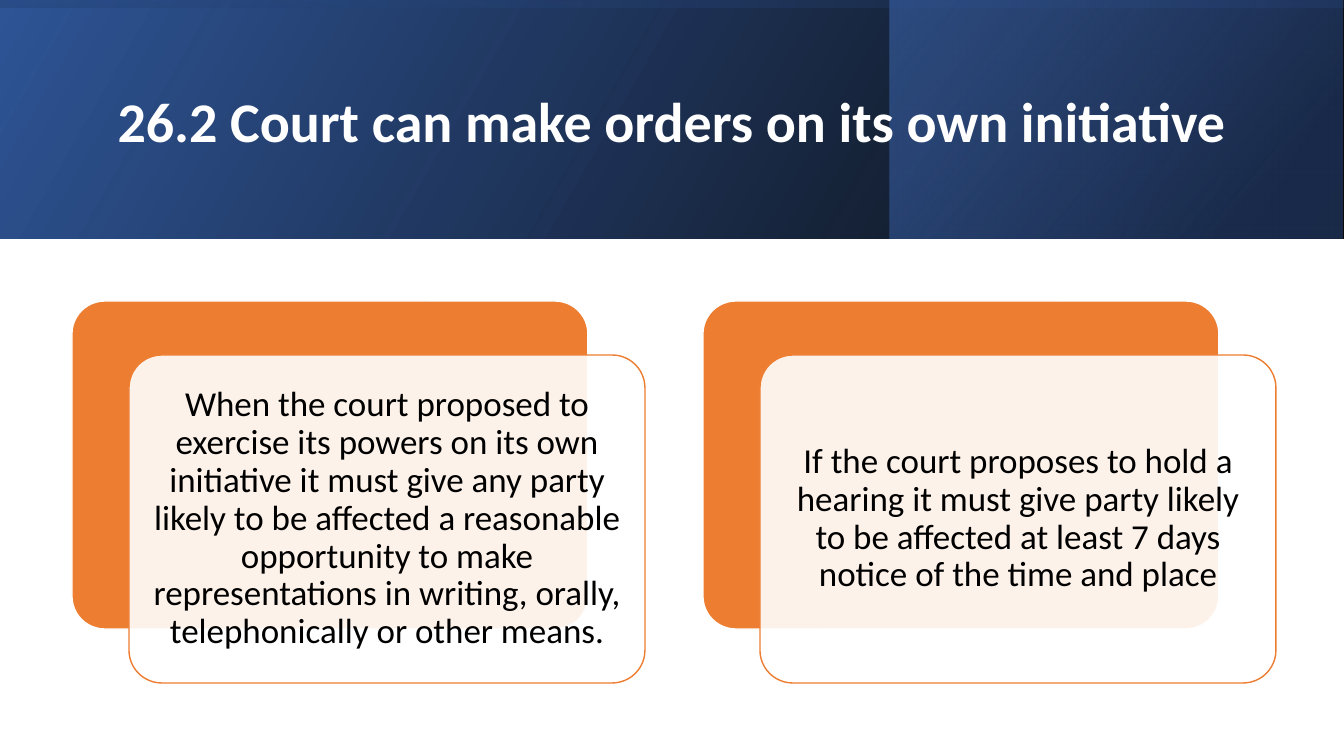
from pptx import Presentation
from pptx.dml.color import RGBColor
from pptx.enum.shapes import MSO_SHAPE
from pptx.enum.text import MSO_ANCHOR, PP_ALIGN
from pptx.oxml.ns import qn
from pptx.util import Pt
from lxml.etree import SubElement

SCALE = 12192000 / 1344
TITLE = "26.2 Court can make orders on its own initiative"
RULES = [
    "When the court proposed to exercise its powers on its own initiative it must give any party "
    "likely to be affected a reasonable opportunity to make representations in writing, orally, "
    "telephonically or other means.",
    "If the court proposes to hold a hearing it must give party likely to be affected at least "
    "7 days notice of the time and place",
]


def px(length):
    return round(length * SCALE)


def color(value):
    return RGBColor.from_string(value)


def set_alphas(shape, alphas):
    fill_colors = shape._element.spPr.iter(qn("a:srgbClr"))
    for fill_color, alpha in zip(fill_colors, alphas):
        SubElement(fill_color, qn("a:alpha")).set("val", str(alpha * 1000))


def add_box(slide, kind, box):
    shape = slide.shapes.add_shape(kind, *[px(length) for length in box])
    shape.shadow.inherit = False
    return shape


def add_gradient(slide, box, stops, angle, rotation=0):
    shape = add_box(slide, MSO_SHAPE.RECTANGLE, box)
    shape.rotation = rotation
    shape._element.spPr.xfrm.set("flipH", "1")
    shape.line.fill.background()
    shape.fill.gradient()
    shape.fill.gradient_angle = 360 - angle
    for stop, (position, value, alpha) in zip(shape.fill.gradient_stops, stops):
        stop.position = position / 100
        stop.color.rgb = color(value)
    set_alphas(shape, [alpha for position, value, alpha in stops])


def write_text(shape, text, size, text_color, bold=False):
    frame = shape.text_frame
    frame.text = text
    frame.word_wrap = True
    frame.vertical_anchor = MSO_ANCHOR.MIDDLE
    frame.margin_left = frame.margin_right = px(10)
    frame.margin_top = frame.margin_bottom = px(10)
    paragraph = frame.paragraphs[0]
    paragraph.alignment = PP_ALIGN.CENTER
    paragraph.line_spacing = 0.9
    font = paragraph.runs[0].font
    font.name = "Calibri"
    font.size = Pt(size)
    font.bold = bold
    font.color.rgb = color(text_color)


def add_header(slide, box):
    left, top, width, height = box
    panel = 452
    shift = (width - height) // 2
    add_gradient(slide, box, [(0, "000000", 96), (100, "2F5597", 100)], 330)
    add_gradient(slide, (left + width - panel - 2, top, panel, height),
                 [(19, "203864", 68), (100, "4472C4", 48)], 320)
    add_gradient(slide, (left + shift, top - shift, height, width),
                 [(23, "2F5597", 16), (99, "000000", 45)], 350, 270)
    title = slide.shapes.add_textbox(px(left + 108), px(top + 38), px(width - 195), px(172))
    write_text(title, TITLE, 40, "FFFFFF", True)
    title.left = px(left + (width - 1149) // 2)


def add_card(slide, box, text):
    left, top, width, height = box
    offset_x, offset_y = 57, 54
    size = (width - offset_x, height - offset_y)
    back = add_box(slide, MSO_SHAPE.ROUNDED_RECTANGLE, (left, top, *size))
    front = add_box(slide, MSO_SHAPE.ROUNDED_RECTANGLE, (left + offset_x, top + offset_y, *size))
    for shape, fill, line in ((back, "ED7D31", "FFFFFF"), (front, "FFFFFF", "ED7D31")):
        shape.adjustments[0] = 0.1
        shape.fill.solid()
        shape.fill.fore_color.rgb = color(fill)
        shape.line.color.rgb = color(line)
        shape.line.width = Pt(1)
    set_alphas(front, [90])
    write_text(front, text, 25, "000000")


def main():
    presentation = Presentation()
    presentation.slide_width = px(1344)
    presentation.slide_height = px(756)
    slide = presentation.slides.add_slide(presentation.slide_layouts[6])
    add_header(slide, (0, 0, 1344, 239))
    for index, rule in enumerate(RULES):
        add_card(slide, (72 + index * 631, 301, 573, 382), rule)
    presentation.save("out.pptx")


if __name__ == "__main__":
    main()
